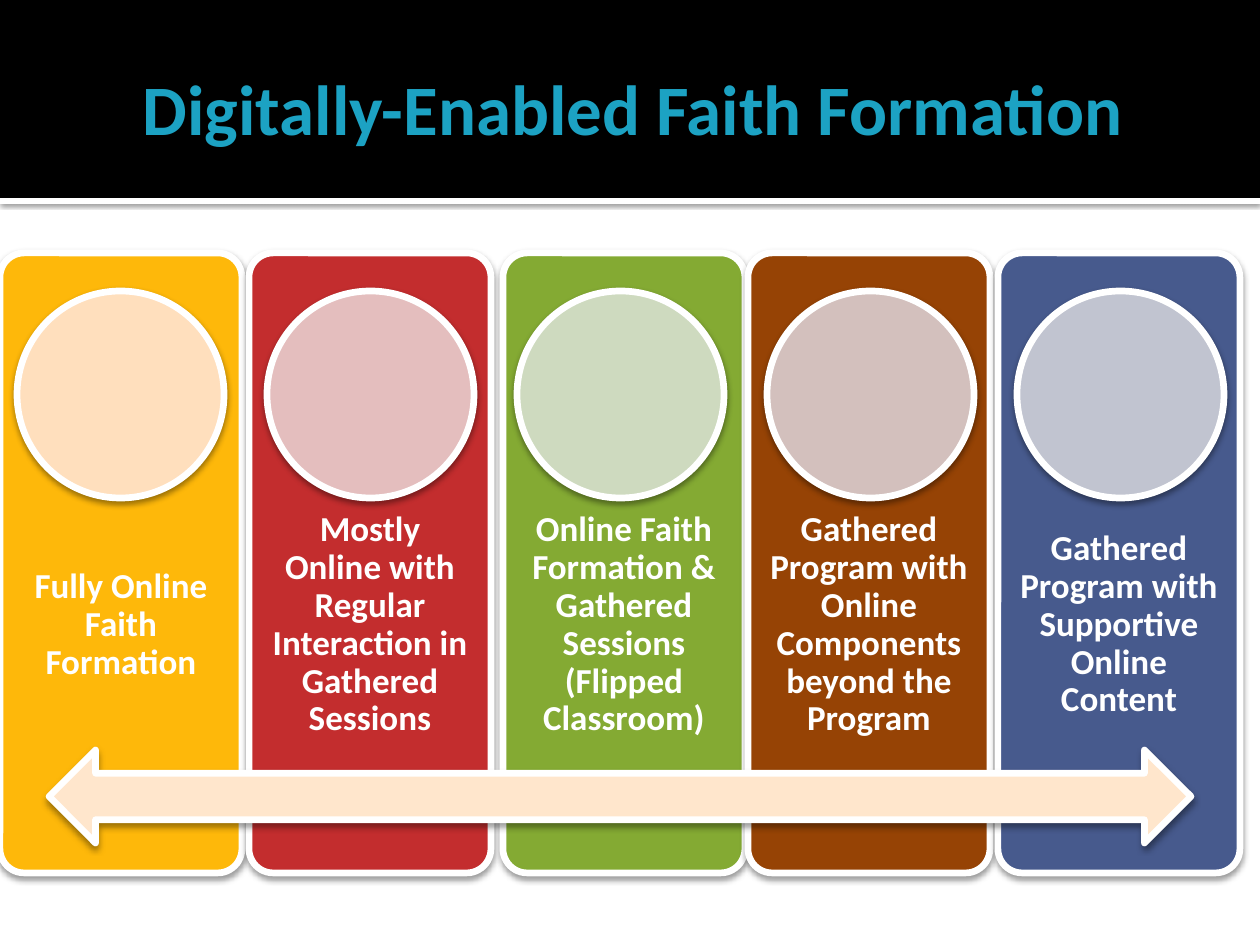
import lxml.etree
import pptx
import pptx.dml.color
import pptx.enum.shapes
import pptx.enum.text
import pptx.oxml.ns
import pptx.util

RGBColor = pptx.dml.color.RGBColor
Shape = pptx.enum.shapes.MSO_SHAPE

WHITE = RGBColor(0xFF, 0xFF, 0xFF)
BLACK = RGBColor(0x00, 0x00, 0x00)
TEAL = RGBColor(0x1C, 0xA2, 0xC3)
YELLOW = RGBColor(0xFE, 0xB8, 0x0A)
RED = RGBColor(0xC3, 0x2D, 0x2E)
GREEN = RGBColor(0x84, 0xAA, 0x33)
BROWN = RGBColor(0x96, 0x43, 0x05)
BLUE = RGBColor(0x47, 0x5A, 0x8D)
PALE_YELLOW = RGBColor(0xFF, 0xDF, 0xBD)
PALE_RED = RGBColor(0xE4, 0xBE, 0xBE)
PALE_GREEN = RGBColor(0xCE, 0xDA, 0xBF)
PALE_BROWN = RGBColor(0xD3, 0xC0, 0xBD)
PALE_BLUE = RGBColor(0xC1, 0xC4, 0xD0)
CREAM = RGBColor(0xFF, 0xE6, 0xCC)

# Panel left edge, panel fill, circle fill, label
PANELS = [
    (0, YELLOW, PALE_YELLOW, "Fully Online Faith Formation"),
    (249, RED, PALE_RED, "Mostly Online with Regular Interaction in Gathered Sessions"),
    (503, GREEN, PALE_GREEN, "Online Faith Formation & Gathered Sessions (Flipped Classroom)"),
    (748, BROWN, PALE_BROWN, "Gathered Program with Online Components beyond the Program"),
    (998, BLUE, PALE_BLUE, "Gathered Program with Supportive Online Content"),
]
PANEL_WIDTH = 242
CIRCLE_LEFT, CIRCLE_STEP, CIRCLE_SIZE = 17, 250, 207


def px(length):
    return round(length * 914400 / 126)


class SlideBuilder:
    font = "Calibri"
    outline = 3.82

    def __init__(self, page):
        self.page = page

    def shape(self, kind, left, top, width, height, fill, outlined=False):
        shape = self.page.shapes.add_shape(kind, px(left), px(top), px(width), px(height))
        shape.shadow.inherit = False
        shape.fill.solid()
        shape.fill.fore_color.rgb = fill
        if outlined:
            shape.line.color.rgb = WHITE
            shape.line.width = pptx.util.Pt(self.outline)
        else:
            shape.line.fill.background()
        return shape

    def shadow(self, shape, blur, distance, opacity):
        qn = pptx.oxml.ns.qn
        effects = shape.element.spPr.find(qn("a:effectLst"))
        outer = lxml.etree.SubElement(
            effects, qn("a:outerShdw"), blurRad=str(pptx.util.Pt(blur)),
            dist=str(pptx.util.Pt(distance)), dir="5400000", rotWithShape="0")
        color = lxml.etree.SubElement(outer, qn("a:srgbClr"), val=str(BLACK))
        lxml.etree.SubElement(color, qn("a:alpha"), val=str(opacity * 1000))

    def raised(self, kind, left, top, width, height, fill):
        shape = self.shape(kind, left, top, width, height, fill, outlined=True)
        self.shadow(shape, 3.5, 2, 38)
        return shape

    def text(self, left, top, width, height, words, size, color, margins, spacing=1.0):
        box = self.page.shapes.add_textbox(px(left), px(top), px(width), px(height))
        frame = box.text_frame
        frame.word_wrap = True
        frame.vertical_anchor = pptx.enum.text.MSO_ANCHOR.MIDDLE
        (frame.margin_left, frame.margin_top,
         frame.margin_right, frame.margin_bottom) = map(px, margins)
        para = frame.paragraphs[0]
        para.text = words
        para.alignment = pptx.enum.text.PP_ALIGN.CENTER
        para.line_spacing = spacing
        para.font.name = self.font
        para.font.size = pptx.util.Pt(size)
        para.font.bold = True
        para.font.color.rgb = color


def main():
    deck = pptx.Presentation()
    deck.slide_width, deck.slide_height = px(1260), px(945)
    builder = SlideBuilder(deck.slides.add_slide(deck.slide_layouts[6]))

    # Title band
    rule = builder.shape(Shape.RECTANGLE, 0, 198, 1260, 6, WHITE)
    builder.shadow(rule, 2.5, 0.8, 60)
    builder.shape(Shape.RECTANGLE, 0, 0, 1260, 198, BLACK)
    builder.text(63, 21, 1134, 173, "Digitally-Enabled Faith Formation",
                 40.5, TEAL, (13, 6, 6, 6))

    # Five panels, each with a label and a circle
    for index, (left, fill, pale, label) in enumerate(PANELS):
        panel = builder.raised(Shape.ROUNDED_RECTANGLE, left, 253, PANEL_WIDTH, 620, fill)
        panel.adjustments[0] = 0.1
        builder.text(left, 501, PANEL_WIDTH, 248, label, 20, WHITE, (20, 20, 20, 20), 0.9)
        builder.raised(Shape.OVAL, CIRCLE_LEFT + index * CIRCLE_STEP, 291,
                       CIRCLE_SIZE, CIRCLE_SIZE, pale)

    # Arrow spanning all panels
    builder.raised(Shape.LEFT_RIGHT_ARROW, 49, 750, 1142, 93, CREAM)

    deck.save("out.pptx")


if __name__ == "__main__":
    main()
